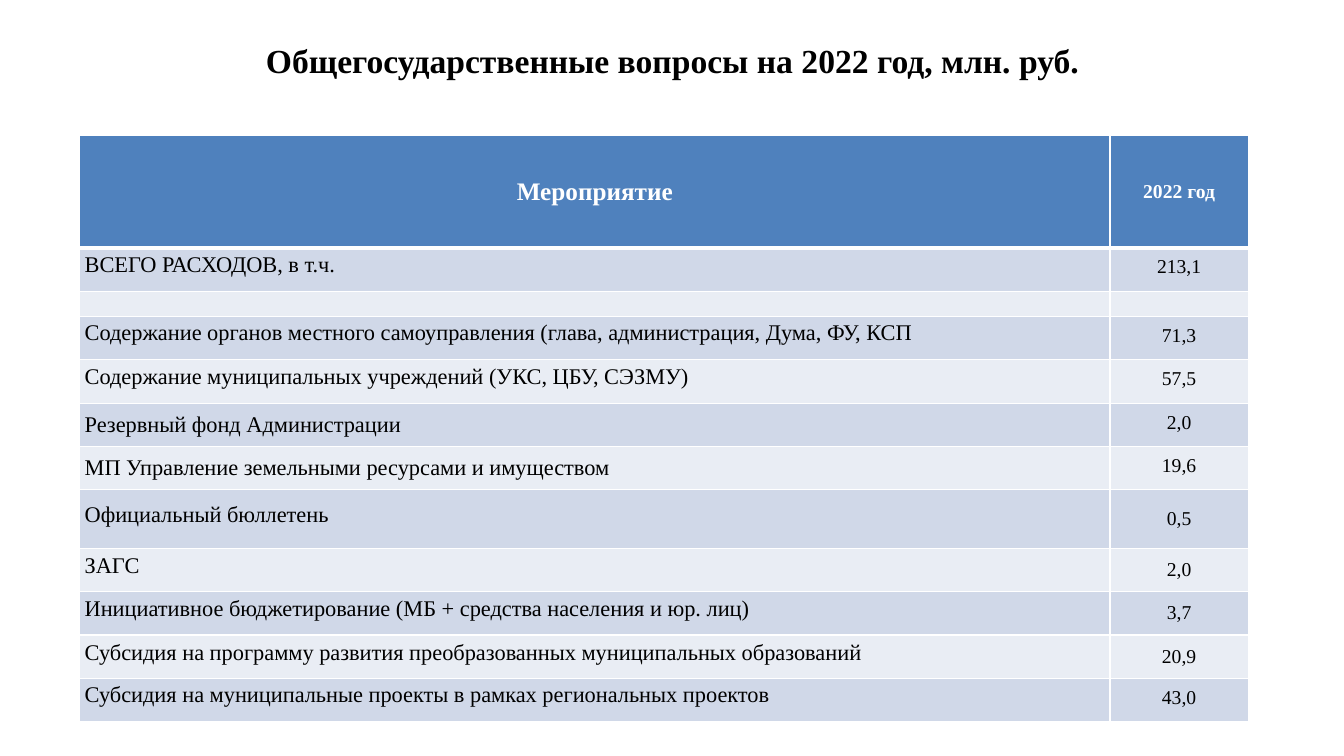
from dataclasses import dataclass

from lxml import etree
from pptx import Presentation
from pptx.dml.color import RGBColor
from pptx.enum.text import MSO_ANCHOR, PP_ALIGN
from pptx.oxml.ns import qn
from pptx.slide import Slide
from pptx.table import Table, _Cell
from pptx.text.text import _Paragraph
from pptx.util import Inches, Pt

CENTER, LEFT = PP_ALIGN.CENTER, PP_ALIGN.LEFT
MIDDLE = MSO_ANCHOR.MIDDLE
FONT = "Times New Roman"
BLACK, WHITE = "000000", "FFFFFF"
HEADER_FILL = "4F81BD"
BAND_FILLS = ("D0D8E8", "E9EDF4")
COLUMN_WIDTHS = (10.22, 1.37)
HEADER_HEIGHT = 1.12
HEADER_RULE, GRID_RULE = 3, 1
HANGING = Inches(0.02)


@dataclass
class Expense:
    activity: str
    amount: str
    activity_spacing: float | None = None  # exact line spacing in points
    tight_amount: bool = True  # narrow margins, hanging indent, 12 pt lines
    height: float = 0.43


EXPENSES = [
    Expense("ВСЕГО РАСХОДОВ, в т.ч.", "213,1", 11),
    Expense("", "", height=0.25),
    Expense("Содержание органов местного самоуправления (глава, администрация, Дума, ФУ, КСП", "71,3", 11),
    Expense("Содержание муниципальных учреждений (УКС, ЦБУ, СЭЗМУ)", "57,5", 11),
    Expense("Резервный фонд Администрации", "2,0"),
    Expense("МП Управление земельными ресурсами и имуществом", "19,6"),
    Expense("Официальный бюллетень", "0,5", 12, False, 0.58),
    Expense("ЗАГС", "2,0", 12, False),
    Expense("Инициативное бюджетирование (МБ + средства населения и юр. лиц)", "3,7", 12, False),
    Expense("Субсидия на программу развития преобразованных муниципальных образований", "20,9", 12, False),
    Expense("Субсидия на муниципальные проекты в рамках региональных проектов", "43,0", 11),
]


def rgb(color: str) -> RGBColor:
    return RGBColor.from_string(color)


def write(paragraph: _Paragraph, text: str, size: float, color: str = BLACK,
          bold: bool = False, align: PP_ALIGN = CENTER) -> None:
    paragraph.text = text
    paragraph.alignment = align
    for run in paragraph.runs:
        run.font.name = FONT
        run.font.size = Pt(size)
        run.font.bold = bold
        run.font.color.rgb = rgb(color)


def style_cell(cell: _Cell, fill: str, top: float = GRID_RULE, bottom: float = GRID_RULE) -> None:
    """Give the cell white rules, a solid fill and middle anchoring."""
    properties = cell._tc.get_or_add_tcPr()
    for side, width in (("L", GRID_RULE), ("R", GRID_RULE), ("T", top), ("B", bottom)):
        line = etree.SubElement(properties, qn(f"a:ln{side}"), w=str(Pt(width)))
        solid = etree.SubElement(line, qn("a:solidFill"))
        etree.SubElement(solid, qn("a:srgbClr"), val=WHITE)
    cell.fill.solid()
    cell.fill.fore_color.rgb = rgb(fill)
    cell.vertical_anchor = MIDDLE


def tighten(cell: _Cell) -> None:
    cell.margin_left = cell.margin_right = Inches(0.05)
    cell.margin_top = cell.margin_bottom = 0


def fill_expense(table: Table, row: int, expense: Expense) -> None:
    table.rows[row].height = Inches(expense.height)
    activity, amount = table.cell(row, 0), table.cell(row, 1)
    for cell in (activity, amount):
        style_cell(cell, BAND_FILLS[(row - 1) % 2], top=HEADER_RULE if row == 1 else GRID_RULE)
    tighten(activity)
    if expense.tight_amount:
        tighten(amount)
    activity_line, amount_line = (cell.text_frame.paragraphs[0] for cell in (activity, amount))
    if not expense.activity:
        for line in (activity_line, amount_line):
            etree.SubElement(line._p, qn("a:endParaRPr"), sz="1000")
        return
    write(activity_line, expense.activity, 16, align=LEFT)
    write(amount_line, expense.amount, 14)
    if expense.activity_spacing:
        activity_line.line_spacing = Pt(expense.activity_spacing)
    if expense.tight_amount:
        amount_line.line_spacing = Pt(12)
        indents = amount_line._p.get_or_add_pPr()
        indents.set("marL", str(HANGING))
        indents.set("indent", str(-HANGING))


def add_title(slide: Slide) -> None:
    title = slide.shapes.add_textbox(Inches(0.67), Inches(0.3), Inches(12), Inches(0.6)).text_frame
    title.word_wrap = True
    title.vertical_anchor = MIDDLE
    write(title.paragraphs[0], "Общегосударственные вопросы на 2022 год, млн. руб.", 24, bold=True)


def add_expense_table(slide: Slide) -> None:
    height = HEADER_HEIGHT + sum(expense.height for expense in EXPENSES)
    table = slide.shapes.add_table(
        len(EXPENSES) + 1, len(COLUMN_WIDTHS),
        Inches(0.79), Inches(1.34), Inches(sum(COLUMN_WIDTHS)), Inches(height),
    ).table
    table.horz_banding = False
    table.first_row = False
    for column, width in zip(table.columns, COLUMN_WIDTHS):
        column.width = Inches(width)
    table.rows[0].height = Inches(HEADER_HEIGHT)
    for column, (heading, size) in enumerate((("Мероприятие", 18), ("2022 год", 14))):
        cell = table.cell(0, column)
        style_cell(cell, HEADER_FILL, bottom=HEADER_RULE)
        write(cell.text_frame.paragraphs[0], heading, size, WHITE, bold=True)
    for row, expense in enumerate(EXPENSES, start=1):
        fill_expense(table, row, expense)


def main() -> None:
    presentation = Presentation()
    presentation.slide_width = Inches(13.33)
    presentation.slide_height = Inches(7.5)
    slide = presentation.slides.add_slide(presentation.slide_layouts[6])
    add_title(slide)
    add_expense_table(slide)
    presentation.save("out.pptx")


if __name__ == "__main__":
    main()
